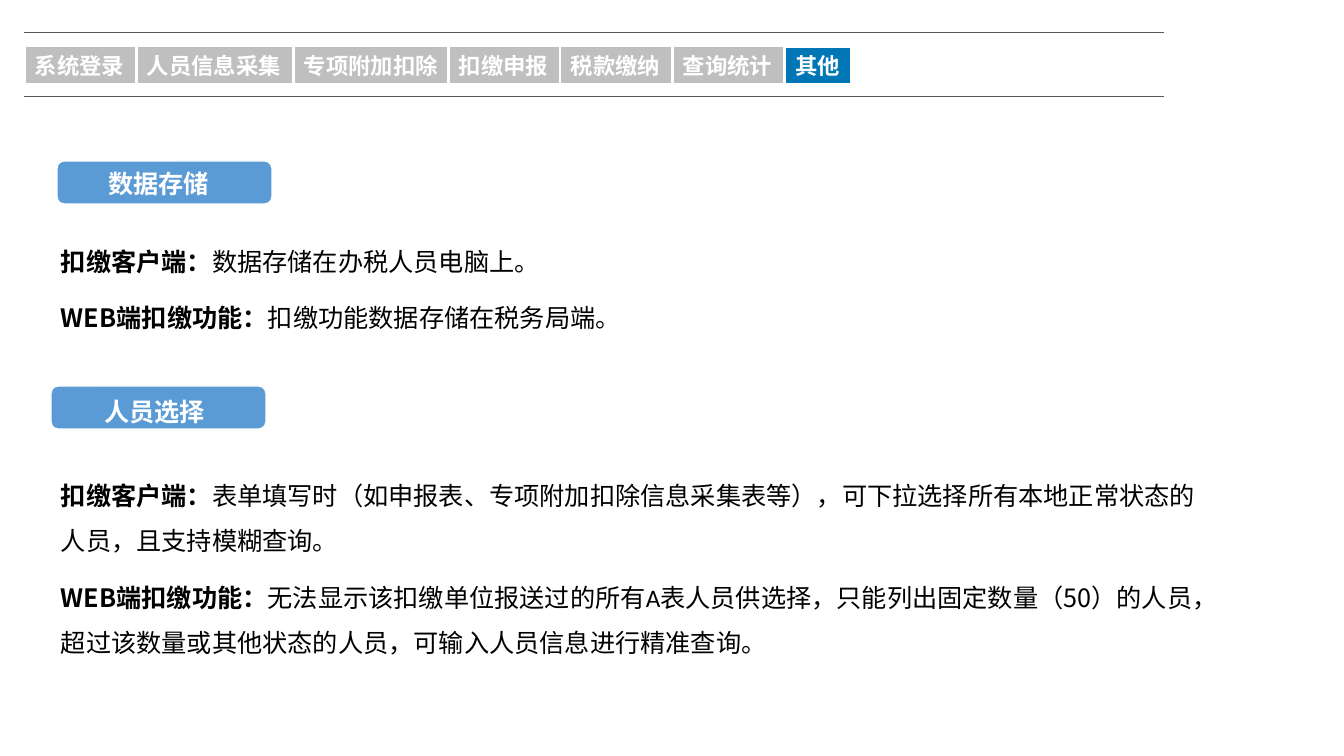
from lxml import etree
from pptx import Presentation
from pptx.dml.color import RGBColor
from pptx.enum.shapes import MSO_CONNECTOR, MSO_SHAPE
from pptx.enum.text import MSO_ANCHOR, PP_ALIGN
from pptx.oxml.ns import qn
from pptx.util import Emu, Pt

LINE = MSO_CONNECTOR.STRAIGHT
ROUNDED, RECT = MSO_SHAPE.ROUNDED_RECTANGLE, MSO_SHAPE.RECTANGLE
TOP, MIDDLE = MSO_ANCHOR.TOP, MSO_ANCHOR.MIDDLE
LEFT, CENTER = PP_ALIGN.LEFT, PP_ALIGN.CENTER

WHITE = RGBColor(0xFF, 0xFF, 0xFF)
BLACK = RGBColor(0x00, 0x00, 0x00)
RULE = RGBColor(0x59, 0x59, 0x59)
TAB = RGBColor(0xBF, 0xBF, 0xBF)
ACTIVE = RGBColor(0x00, 0x76, 0xB4)
PILL = RGBColor(0x5B, 0x9B, 0xD5)

SANS, CJK = "Calibri", "Noto Sans CJK SC"
WIDTH, HEIGHT = 1344, 756

TABS = [("系统登录", 111), ("人员信息采集", 156), ("专项附加扣除", 154),
        ("扣缴申报", 111), ("税款缴纳", 111), ("查询统计", 111), ("其他", 66)]
CLIENT = ("扣缴客户端：", SANS, True)
WEB = [("WEB", CJK, True), ("端扣缴功能：", SANS, True)]


def px(n):
    return Emu(n * 12192000 // WIDTH)


def add_run(p, text, font=CJK, size=18, color=WHITE, bold=True):
    r = p.add_run()
    r.text = text
    r.font.name, r.font.size, r.font.bold = font, Pt(size), bold
    r.font.color.rgb = color
    ea = etree.SubElement(r.font._element, qn("a:ea"))
    ea.set("typeface", font)


class Deck:
    """Draws the slide's elements in one style, with lengths in px."""

    def __init__(self):
        self.prs = Presentation()
        self.prs.slide_width, self.prs.slide_height = px(WIDTH), px(HEIGHT)
        self.s = self.prs.slides.add_slide(self.prs.slide_layouts[5])

    def rule(self, x, y, w):
        c = self.s.shapes.add_connector(LINE, px(x), px(y), px(x + w), px(y))
        c.line.color.rgb, c.line.width = RULE, Pt(0.5)
        etree.SubElement(c._element.spPr, qn("a:effectLst"))

    def paint(self, sp, fill, width):
        sp.fill.solid()
        sp.fill.fore_color.rgb = fill
        sp.line.color.rgb, sp.line.width = WHITE, Pt(width)
        sp.shadow.inherit = False

    def tab(self, text, x, y, w, h, active):
        if active:
            sp = self.s.shapes.title
            sp.left, sp.top, sp.width, sp.height = map(px, (x, y, w, h))
        else:
            sp = self.s.shapes.add_shape(RECT, *map(px, (x, y, w, h)))
        self.paint(sp, ACTIVE if active else TAB, 0.75)
        tf = sp.text_frame
        tf.word_wrap, tf.vertical_anchor = False, MIDDLE
        p = tf.paragraphs[0]
        p.alignment = LEFT
        add_run(p, text, size=16)

    def heading(self, text, x, y, top, right):
        sp = self.s.shapes.add_shape(ROUNDED, *map(px, (x, y, 215, 43)))
        self.paint(sp, PILL, 1)
        tf = sp.text_frame
        tf.vertical_anchor = TOP
        tf.margin_top, tf.margin_bottom = px(top), 0
        tf.margin_right = px(right)
        p = tf.paragraphs[0]
        p.alignment = CENTER
        add_run(p, text)

    def body(self, runs, y, w, h, spacing=None):
        tf = self.s.shapes.add_textbox(*map(px, (51, y, w, h))).text_frame
        tf.word_wrap = True
        p = tf.paragraphs[0]
        p.line_spacing = spacing
        for text, font, bold in runs:
            add_run(p, text, font=font, color=BLACK, bold=bold)


def main():
    d = Deck()
    for y in (32, 96):
        d.rule(24, y, 1140)

    x = 25
    for text, w in TABS:
        d.tab(text, x, 47, w, 37, active=text == "其他")
        x += w + 1

    d.heading("数据存储", 57, 161, top=5, right=22)
    d.body([CLIENT, ("数据存储在办税人员电脑上。", SANS, False)], 241, 1177, 40)
    d.body([*WEB, ("扣缴功能数据存储在税务局端。", SANS, False)], 297, 1142, 40)

    d.heading("人员选择", 51, 386, top=8, right=18)
    d.body([CLIENT,
            ("表单填写时（如申报表、专项附加扣除信息采集表等），可下拉选择所有本地"
             "正常状态的人员，且支持模糊查询。", SANS, False)], 460, 1177, 102, 1.5)
    d.body([*WEB,
            ("无法显示该扣缴单位报送过的所有A表人员供选择，只能列出", SANS, False),
            ("固定数量（50）", CJK, False),
            ("的人员，超过该数量或其他状态的人员，可输入人员信息进行精准查询。",
             SANS, False)], 562, 1160, 102, 1.5)
    d.prs.save("out.pptx")


if __name__ == "__main__":
    main()
